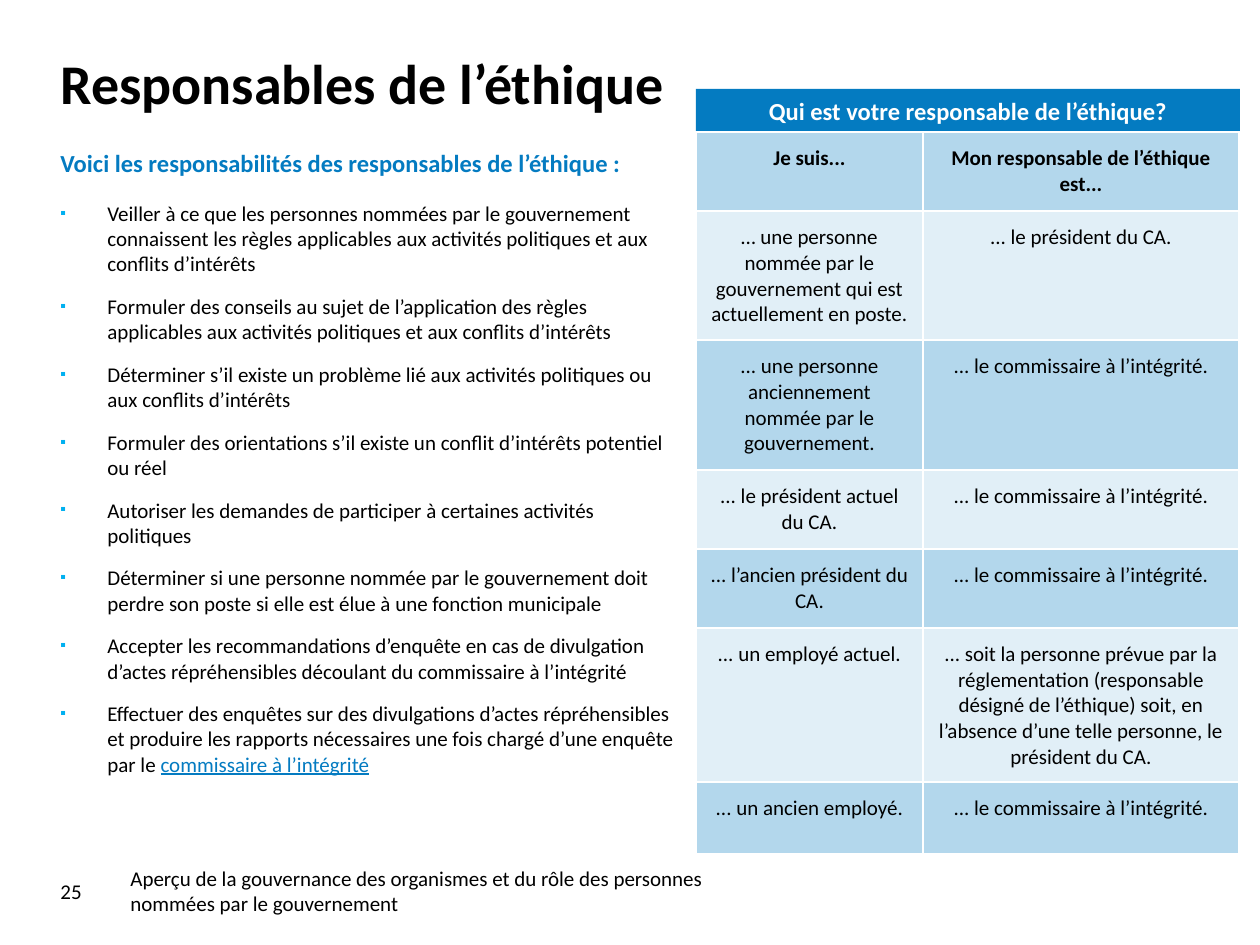
from dataclasses import dataclass

from lxml.etree import SubElement
from pptx import Presentation
from pptx.dml.color import RGBColor
from pptx.enum.shapes import MSO_SHAPE as Shape
from pptx.enum.text import MSO_ANCHOR as Anchor, PP_ALIGN as Align
from pptx.oxml.ns import qn
from pptx.util import Pt

PX = 914400 / 126
FONT = "Calibri"
COLORS = {
    "black": "000000",
    "white": "FFFFFF",
    "blue": "047BC1",
    "bullet": "00B0F0",
    "dark band": "B3D7EC",
    "light band": "E1EFF7",
}


@dataclass(frozen=True)
class Box:
    left: int
    top: int
    width: int
    height: int

    def emu(self) -> tuple:
        return tuple(px(v) for v in (self.left, self.top, self.width, self.height))


@dataclass(frozen=True)
class Style:
    size: int = 12
    color: str = "black"
    bold: bool = False
    underline: bool = False


@dataclass(frozen=True)
class Label:
    box: Box
    text: str
    style: Style = Style()
    anchor: Anchor = Anchor.TOP
    line_spacing: float = 1.0


BODY = Style()
STRONG = Style(bold=True)
LINK = Style(color="blue", underline=True)

LABELS = [
    Label(Box(48, 50, 1166, 136), "Responsables de l’éthique", Style(32, bold=True), line_spacing=0.9),
    Label(Box(48, 142, 665, 43), "Voici les responsabilités des responsables de l’éthique\u00a0:",
          Style(14, "blue", bold=True)),
    Label(Box(48, 866, 71, 50), "25", anchor=Anchor.MIDDLE),
    Label(Box(118, 866, 609, 50),
          "Aperçu de la gouvernance des organismes et du rôle des personnes nommées par le gouvernement",
          anchor=Anchor.MIDDLE),
]

DUTIES_BOX = Box(48, 194, 648, 659)
DUTIES = [
    [("Veiller à ce que les personnes nommées par le gouvernement connaissent les règles "
      "applicables aux activités politiques et aux conflits d’intérêts", BODY)],
    [("Formuler des conseils au sujet de l’application des règles applicables aux activités "
      "politiques et aux conflits d’intérêts", BODY)],
    [("Déterminer s’il existe un problème lié aux activités politiques ou aux conflits d’intérêts", BODY)],
    [("Formuler des orientations s’il existe un conflit d’intérêts potentiel ou réel", BODY)],
    [("Autoriser les demandes de participer à certaines activités politiques", BODY)],
    [("Déterminer si une personne nommée par le gouvernement doit perdre son poste si elle est "
      "élue à une fonction municipale", BODY)],
    [("Accepter les recommandations d’enquête en cas de divulgation d’actes répréhensibles "
      "découlant du commissaire à l’intégrité", BODY)],
    [("Effectuer des enquêtes sur des divulgations d’actes répréhensibles et produire les rapports "
      "nécessaires une fois chargé d’une enquête par le ", BODY),
     ("commissaire à l’intégrité", LINK)],
]

BANNER = Box(696, 89, 544, 43)
TABLE_BOX = Box(696, 132, 543, 722)
COLUMN_WIDTHS = [227, 316]
ROW_HEIGHTS = [79, 129, 130, 79, 79, 154, 72]
COMMISSIONER = "... le commissaire à l’intégrité."
ROWS = [
    ("Je suis...", "Mon responsable de l’éthique est..."),
    ("… une personne nommée par le gouvernement qui est actuellement en poste.", "... le président du CA."),
    ("... une personne anciennement nommée par le gouvernement.", COMMISSIONER),
    ("... le président actuel du CA.", COMMISSIONER),
    ("... l’ancien président du CA.", COMMISSIONER),
    ("... un employé actuel.",
     "... soit la personne prévue par la réglementation (responsable désigné de l’éthique) soit, "
     "en l’absence d’une telle personne, le président du CA."),
    ("... un ancien employé.", COMMISSIONER),
]


def px(value: int) -> int:
    return round(value * PX)


def rgb(name: str) -> RGBColor:
    return RGBColor.from_string(COLORS[name])


def add_run(paragraph, text: str, style: Style) -> None:
    run = paragraph.add_run()
    run.text = text
    font = run.font
    font.name, font.size, font.bold = FONT, Pt(style.size), style.bold
    font.underline = style.underline
    font.color.rgb = rgb(style.color)


def add_bullet(paragraph) -> None:
    properties = paragraph._p.get_or_add_pPr()
    properties.set("marL", str(px(47)))
    properties.set("indent", str(px(-47)))
    color = SubElement(properties, qn("a:buClr"))
    SubElement(color, qn("a:srgbClr"), val=COLORS["bullet"])
    SubElement(properties, qn("a:buSzPct"), val="75000")
    SubElement(properties, qn("a:buFont"), typeface=FONT)
    SubElement(properties, qn("a:buChar"), char="▪")


def add_text_frame(slide, box: Box):
    frame = slide.shapes.add_textbox(*box.emu()).text_frame
    frame.word_wrap = True
    return frame


def draw_label(slide, label: Label) -> None:
    frame = add_text_frame(slide, label.box)
    frame.vertical_anchor = label.anchor
    paragraph = frame.paragraphs[0]
    paragraph.line_spacing = label.line_spacing
    add_run(paragraph, label.text, label.style)


def draw_duties(slide) -> None:
    frame = add_text_frame(slide, DUTIES_BOX)
    for index, runs in enumerate(DUTIES):
        paragraph = frame.add_paragraph() if index else frame.paragraphs[0]
        add_bullet(paragraph)
        paragraph.space_before = Pt(10 if index else 0)
        for text, style in runs:
            add_run(paragraph, text, style)


def draw_banner(slide) -> None:
    shape = slide.shapes.add_shape(Shape.RECTANGLE, *BANNER.emu())
    shape.shadow.inherit = False
    shape.fill.solid()
    shape.fill.fore_color.rgb = rgb("blue")
    shape.line.fill.background()
    shape.text_frame.word_wrap = True
    paragraph = shape.text_frame.paragraphs[0]
    paragraph.alignment = Align.CENTER
    add_run(paragraph, "Qui est votre responsable de l’éthique?", Style(14, "white", bold=True))


def draw_table(slide) -> None:
    """White rules come from the default table style."""
    table = slide.shapes.add_table(len(ROWS), len(COLUMN_WIDTHS), *TABLE_BOX.emu()).table
    for column, width in zip(table.columns, COLUMN_WIDTHS):
        column.width = px(width)
    for index, (row, height, texts) in enumerate(zip(table.rows, ROW_HEIGHTS, ROWS)):
        row.height = px(height)
        for cell, text in zip(row.cells, texts):
            cell.margin_left = cell.margin_right = cell.margin_top = cell.margin_bottom = px(14)
            cell.fill.solid()
            cell.fill.fore_color.rgb = rgb("light band" if index % 2 else "dark band")
            paragraph = cell.text_frame.paragraphs[0]
            paragraph.alignment = Align.CENTER
            add_run(paragraph, text, BODY if index else STRONG)


def main() -> None:
    presentation = Presentation()
    presentation.slide_width, presentation.slide_height = px(1260), px(945)
    slide = presentation.slides.add_slide(presentation.slide_layouts[6])
    for label in LABELS:
        draw_label(slide, label)
    draw_duties(slide)
    draw_banner(slide)
    draw_table(slide)
    presentation.save("out.pptx")


if __name__ == "__main__":
    main()
